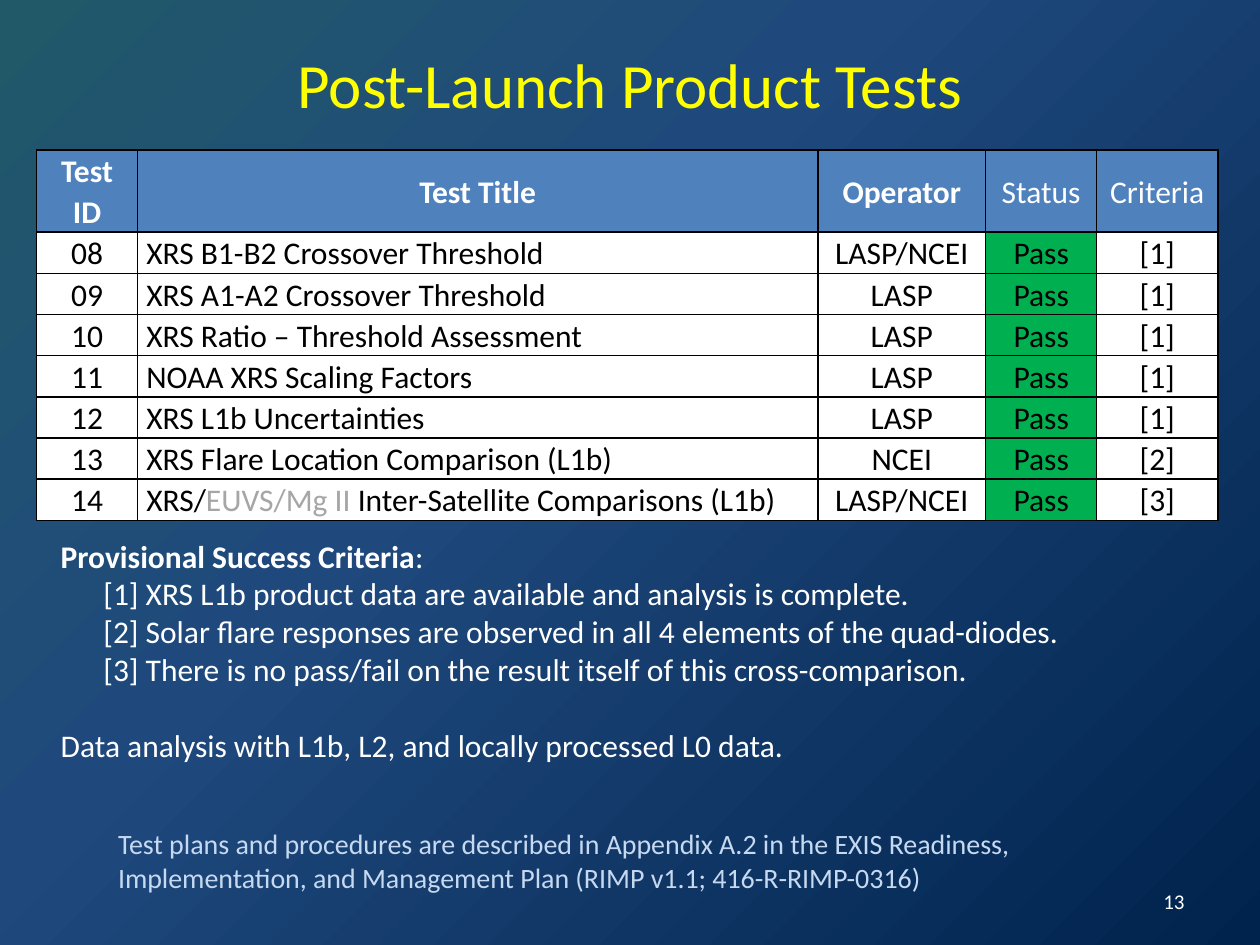
from dataclasses import dataclass

from lxml import etree
from pptx import Presentation
from pptx.dml.color import RGBColor
from pptx.enum.text import MSO_ANCHOR, MSO_AUTO_SIZE, PP_ALIGN
from pptx.oxml import parse_xml
from pptx.oxml.ns import qn
from pptx.util import Cm, Pt

LEFT, CENTER, RIGHT = PP_ALIGN.LEFT, PP_ALIGN.CENTER, PP_ALIGN.RIGHT
TOP, MIDDLE = MSO_ANCHOR.TOP, MSO_ANCHOR.MIDDLE
NO_FIT = MSO_AUTO_SIZE.NONE
DRAWING_NS = "http://schemas.openxmlformats.org/drawingml/2006/main"


@dataclass(frozen=True)
class Theme:
    font: str = "Calibri"
    title: str = "FFFF00"
    light: str = "FFFFFF"
    dark: str = "000000"
    muted: str = "A6A6A6"
    note: str = "C6D9F1"
    header: str = "4F81BD"
    passed: str = "00B050"
    backdrop: tuple = ((0, "215968"), (40, "1F497D"), (100, "00234D"))
    title_size: int = 36
    text_size: int = 18
    note_size: int = 16
    number_size: int = 12
    border_width: int = 1


THEME = Theme()

COLUMN_WIDTHS = (2.03, 13.72, 3.38, 2.24, 2.44)
HEADER_HEIGHT, ROW_HEIGHT = 1.64, 0.82
HEADERS = ("Test ID", "Test Title", "Operator", "Status", "Criteria")
BOLD_HEADERS = HEADERS[:3]
TITLE_COLUMN, STATUS_COLUMN = 1, 3
MUTED_PART = "EUVS/Mg II "
TESTS = (
    ("08", "XRS B1-B2 Crossover Threshold", "LASP/NCEI", "Pass", "[1]"),
    ("09", "XRS A1-A2 Crossover Threshold", "LASP", "Pass", "[1]"),
    ("10", "XRS Ratio – Threshold Assessment", "LASP", "Pass", "[1]"),
    ("11", "NOAA XRS Scaling Factors", "LASP", "Pass", "[1]"),
    ("12", "XRS L1b Uncertainties", "LASP", "Pass", "[1]"),
    ("13", "XRS Flare Location Comparison (L1b)", "NCEI", "Pass", "[2]"),
    ("14", f"XRS/{MUTED_PART}Inter-Satellite Comparisons (L1b)",
     "LASP/NCEI", "Pass", "[3]"),
)
CRITERIA = (
    "[1] XRS L1b product data are available and analysis is complete.",
    "[2] Solar flare responses are observed in all 4 elements of the quad-diodes.",
    "[3] There is no pass/fail on the result itself of this cross-comparison.",
)


def rgb(color):
    return RGBColor.from_string(color)


def style(p, size, color, align=LEFT, bold=False):
    p.alignment = align
    p.font.name = THEME.font
    p.font.size = Pt(size)
    p.font.bold = bold
    p.font.color.rgb = rgb(color)


def place(sp, box, anchor=TOP):
    """Put a text shape in a box of (left, top, width, height) in cm."""
    sp.left, sp.top, sp.width, sp.height = map(Cm, box)
    tf = sp.text_frame
    tf.word_wrap = True
    tf.auto_size = NO_FIT
    tf.vertical_anchor = anchor
    return tf


def add_background(s):
    stops = "".join(
        f'<a:gs pos="{pos * 1000}"><a:srgbClr val="{color}"/></a:gs>'
        for pos, color in THEME.backdrop)
    gradient = parse_xml(
        f'<a:gradFill xmlns:a="{DRAWING_NS}" rotWithShape="1">'
        f'<a:gsLst>{stops}</a:gsLst><a:path path="circle">'
        '<a:fillToRect r="100000" b="100000"/></a:path></a:gradFill>')
    s.background.fill.solid()
    solid = s.element.find(".//" + qn("p:bgPr")).find(qn("a:solidFill"))
    solid.getparent().replace(solid, gradient)


def add_title(s, box):
    tf = place(s.shapes.title, box, MIDDLE)
    tf.text = "Post-Launch Product Tests"
    style(tf.paragraphs[0], THEME.title_size, THEME.title, CENTER)


def add_borders(cell):
    tcPr = cell._tc.get_or_add_tcPr()
    for side in ("a:lnL", "a:lnR", "a:lnT", "a:lnB"):
        ln = etree.SubElement(tcPr, qn(side), w=str(Pt(THEME.border_width)))
        fill = etree.SubElement(ln, qn("a:solidFill"))
        etree.SubElement(fill, qn("a:srgbClr"), val=THEME.dark)


def fill_cell(cell, text, fill, color, align, bold):
    add_borders(cell)
    cell.fill.solid()
    cell.fill.fore_color.rgb = rgb(fill)
    cell.vertical_anchor = MIDDLE
    cell.margin_left = cell.margin_right = Cm(0.18)
    cell.margin_top = cell.margin_bottom = 0
    p = cell.text_frame.paragraphs[0]
    style(p, THEME.text_size, color, align, bold)
    p.line_spacing = 1.07
    before, muted, after = text.partition(MUTED_PART)
    for part in filter(None, (before, muted, after)):
        r = p.add_run()
        r.text = part
        # Table styles override paragraph defaults, so runs carry the font.
        r.font.name, r.font.size, r.font.bold = THEME.font, Pt(THEME.text_size), bold
        r.font.color.rgb = rgb(THEME.muted if part == MUTED_PART else color)


def add_test_table(s, left, top):
    height = HEADER_HEIGHT + ROW_HEIGHT * len(TESTS)
    table = s.shapes.add_table(
        len(TESTS) + 1, len(HEADERS), Cm(left), Cm(top),
        Cm(sum(COLUMN_WIDTHS)), Cm(height)).table
    for column, width in zip(table.columns, COLUMN_WIDTHS):
        column.width = Cm(width)
    for i, row in enumerate(table.rows):
        row.height = Cm(ROW_HEIGHT if i else HEADER_HEIGHT)
    for j, text in enumerate(HEADERS):
        fill_cell(table.cell(0, j), text, THEME.header, THEME.light,
                  CENTER, text in BOLD_HEADERS)
    for i, test in enumerate(TESTS, 1):
        for j, text in enumerate(test):
            fill_cell(table.cell(i, j), text,
                      THEME.passed if j == STATUS_COLUMN else THEME.light,
                      THEME.dark, LEFT if j == TITLE_COLUMN else CENTER, False)


def add_criteria(s, box):
    tf = place(s.placeholders[1], box)
    lines = ("", *CRITERIA, "Data analysis with L1b, L2, and locally processed L0 data.")
    tf.text = "\n".join(lines)
    for p in tf.paragraphs:
        style(p, THEME.text_size, THEME.light)
        p.space_before = Pt(0)
        pPr = p._p.get_or_add_pPr()
        pPr.set("marL", str(Cm(0.86) if p.text in CRITERIA else 0))
        pPr.set("indent", "0")
        pPr.insert_element_before(
            etree.Element(qn("a:buNone")), "a:tabLst", "a:defRPr", "a:extLst")
    heading, closing = tf.paragraphs[0], tf.paragraphs[-1]
    for text, bold in (("Provisional Success Criteria", True), (":", False)):
        r = heading.add_run()
        r.text = text
        r.font.bold = bold
    closing.space_before = Pt(22)


def add_text(s, box, text, size, color, align=LEFT, anchor=TOP):
    tf = place(s.shapes.add_textbox(0, 0, 0, 0), box, anchor)
    tf.text = text
    style(tf.paragraphs[0], size, color, align)


def main():
    prs = Presentation()
    prs.slide_width, prs.slide_height = Cm(25.4), Cm(19.05)
    s = prs.slides.add_slide(prs.slide_layouts[1])
    add_background(s)
    add_title(s, (1.27, 0.25, 22.86, 2.87))
    add_test_table(s, 0.74, 3.02)
    add_text(s, (2.13, 16.54, 20.5, 1.63),
             "Test plans and procedures are described in Appendix A.2 in the EXIS "
             "Readiness, Implementation, and Management Plan (RIMP v1.1; "
             "416-R-RIMP-0316)", THEME.note_size, THEME.note)
    add_criteria(s, (0.97, 10.69, 22.86, 4.88))
    add_text(s, (18.21, 17.65, 5.92, 1.02), "13",
             THEME.number_size, THEME.light, RIGHT, MIDDLE)
    prs.save("out.pptx")


if __name__ == "__main__":
    main()
